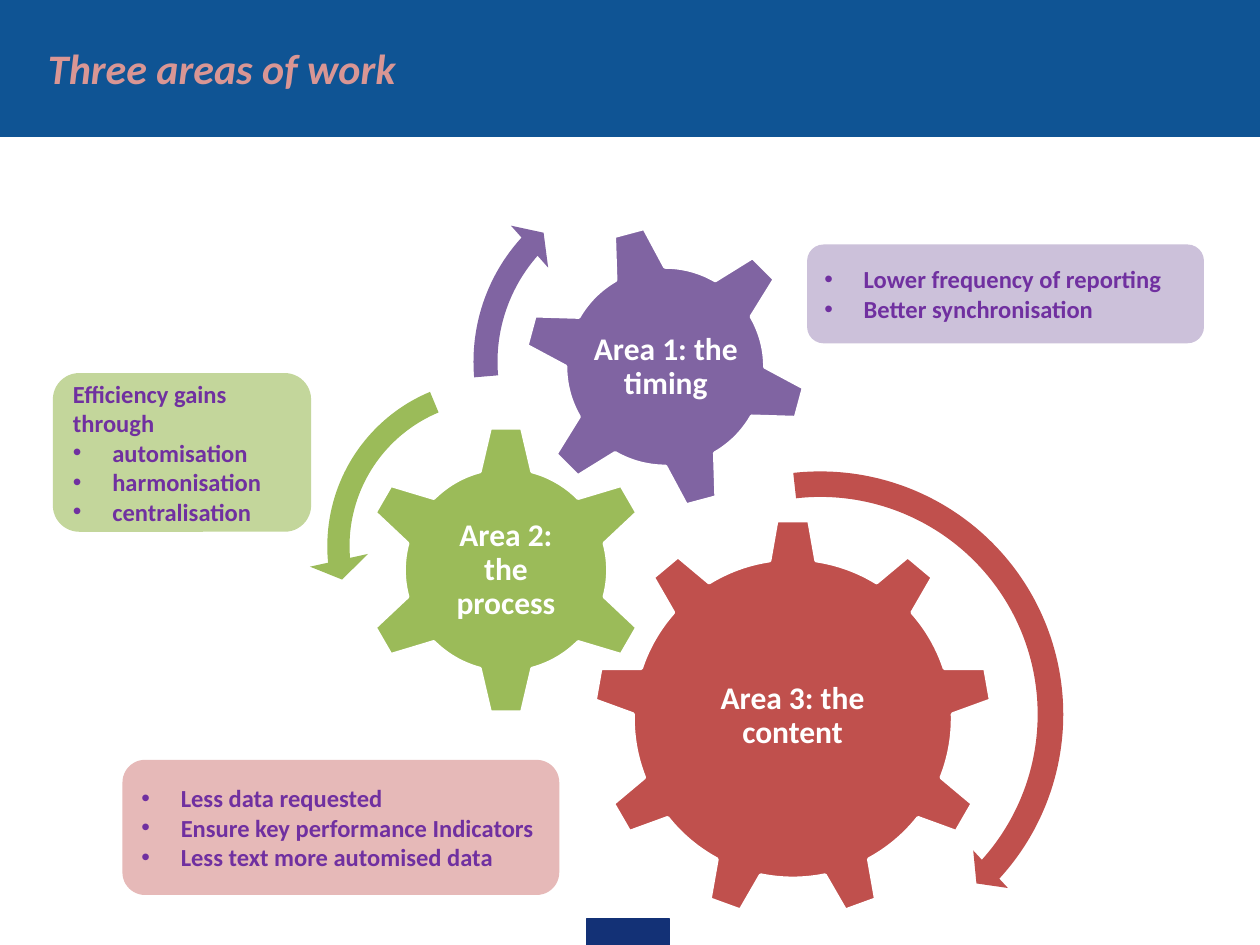
from dataclasses import dataclass

from lxml import etree
from pptx import Presentation
from pptx.dml.color import RGBColor
from pptx.enum.shapes import MSO_SHAPE
from pptx.enum.text import MSO_ANCHOR, MSO_AUTO_SIZE, PP_ALIGN
from pptx.oxml.ns import qn
from pptx.util import Pt

RECT, ROUNDED = MSO_SHAPE.RECTANGLE, MSO_SHAPE.ROUNDED_RECTANGLE
GEAR_6, GEAR_9 = MSO_SHAPE.GEAR_6, MSO_SHAPE.GEAR_9
CLOCKWISE, COUNTERCLOCKWISE = MSO_SHAPE.CIRCULAR_ARROW, MSO_SHAPE.LEFT_CIRCULAR_ARROW
TOP, MIDDLE = MSO_ANCHOR.TOP, MSO_ANCHOR.MIDDLE
LEFT, CENTER = PP_ALIGN.LEFT, PP_ALIGN.CENTER
GROW = MSO_AUTO_SIZE.SHAPE_TO_FIT_TEXT

Box = tuple[float, float, float, float]  # left, top, width, height in points


@dataclass(frozen=True)
class Theme:
    font: str = "Calibri"
    title_size: float = 24
    label_size: float = 18
    note_size: float = 14
    header: str = "0F5494"
    footer: str = "133176"
    title: str = "D99694"
    white: str = "FFFFFF"
    note: str = "7030A0"
    red: str = "C0504D"
    green: str = "9BBB59"
    purple: str = "8064A2"
    light_red: str = "E6B9B8"
    light_green: str = "C3D69B"
    light_purple: str = "CCC1DA"


THEME = Theme()
BULLET_INDENT = 22.5
LABEL_INSET = 2


@dataclass(frozen=True)
class Gear:
    kind: int
    left: float
    top: float
    size: float
    color: str
    label: str
    label_box: Box
    rotation: float = 0


@dataclass(frozen=True)
class TurnArrow:
    kind: int
    left: float
    top: float
    size: float
    color: str
    adjustments: tuple[float, ...]


@dataclass(frozen=True)
class Note:
    box: Box
    color: str
    bullets: tuple[str, ...]
    intro: str = ""


GEARS = [
    Gear(GEAR_9, 339, 296.6, 228.2, THEME.red, "Area 3: the content",
         (384.5, 350.6, 136.8, 117.4)),
    Gear(GEAR_6, 206, 242.6, 166.3, THEME.green, "Area 2: the process",
         (247.7, 285.1, 82.8, 82.1)),
    Gear(GEAR_6, 298.8, 128.2, 162.7, THEME.purple, "Area 1: the timing",
         (334.8, 164.2, 91.4, 91.4), 345),
]
TURN_ARROWS = [
    TurnArrow(CLOCKWISE, 322.6, 262.1, 292.3, THEME.red,
              (0.05, 2.99, 25.37, 158.17, 0.05)),
    TurnArrow(COUNTERCLOCKWISE, 176.4, 205.9, 212.4, THEME.green,
              (0.06, 4.3, 104.89, 148.38, 0.08)),
    TurnArrow(CLOCKWISE, 261.4, 92.2, 229, THEME.purple,
              (0.06, 3.94, 133.14, 105.08, 0.07)),
]
NOTES = [
    Note((461.2, 139.7, 226.8, 56.5), THEME.light_purple,
         ("Lower frequency of reporting", "Better synchronisation")),
    Note((70, 434.2, 249.6, 77.2), THEME.light_red,
         ("Less data requested", "Ensure key performance Indicators",
          "Less text more automised data")),
    Note((30.2, 213.2, 147.6, 90.7), THEME.light_green,
         ("automisation", "harmonisation", "centralisation"),
         "Efficiency gains through"),
]


def rgb(color: str) -> RGBColor:
    return RGBColor.from_string(color)


def add_filled(slide, kind: int, box: Box, color: str,
               line_color: str = "", line_width: float = 0.75):
    shape = slide.shapes.add_shape(kind, *map(Pt, box))
    shape.shadow.inherit = False
    shape.fill.solid()
    shape.fill.fore_color.rgb = rgb(color)
    if line_color:
        shape.line.color.rgb = rgb(line_color)
        shape.line.width = Pt(line_width)
    else:
        shape.line.fill.background()
    return shape


def set_font(paragraph, size: float, color: str, italic: bool = False) -> None:
    font = paragraph.font
    font.name, font.size = THEME.font, Pt(size)
    font.bold, font.italic = True, italic
    font.color.rgb = rgb(color)


def add_bullet(paragraph) -> None:
    properties = paragraph._p.get_or_add_pPr()
    properties.set("marL", str(Pt(BULLET_INDENT)))
    properties.set("indent", str(-Pt(BULLET_INDENT)))
    bullet_font = etree.SubElement(properties, qn("a:buFont"))
    bullet_font.set("typeface", "Arial")
    etree.SubElement(properties, qn("a:buChar")).set("char", "•")


def draw_gear(slide, gear: Gear) -> None:
    box = (gear.left, gear.top, gear.size, gear.size)
    wheel = add_filled(slide, gear.kind, box, gear.color, THEME.white, 2)
    wheel.rotation = gear.rotation
    frame = slide.shapes.add_textbox(*map(Pt, gear.label_box)).text_frame
    frame.word_wrap, frame.vertical_anchor = True, MIDDLE
    frame.margin_left = frame.margin_right = Pt(LABEL_INSET)
    frame.margin_top = frame.margin_bottom = Pt(LABEL_INSET)
    label = frame.paragraphs[0]
    label.text, label.alignment, label.line_spacing = gear.label, CENTER, 0.9
    set_font(label, THEME.label_size, THEME.white)


def draw_turn_arrow(slide, arrow: TurnArrow) -> None:
    box = (arrow.left, arrow.top, arrow.size, arrow.size)
    turn = add_filled(slide, arrow.kind, box, arrow.color)
    for index, value in enumerate(arrow.adjustments):
        turn.adjustments[index] = value


def draw_note(slide, note: Note) -> None:
    frame = add_filled(slide, ROUNDED, note.box, note.color).text_frame
    frame.word_wrap, frame.vertical_anchor = True, MIDDLE
    lines = ([note.intro] if note.intro else []) + list(note.bullets)
    for index, line in enumerate(lines):
        paragraph = frame.add_paragraph() if index else frame.paragraphs[0]
        paragraph.text, paragraph.alignment = line, LEFT
        if line != note.intro:
            add_bullet(paragraph)
        set_font(paragraph, THEME.note_size, THEME.note)


def draw_title(slide, text: str) -> None:
    title = slide.shapes.title
    title.left, title.top, title.width, title.height = map(Pt, (20.2, 20.9, 277.2, 36))
    frame = title.text_frame
    frame.word_wrap, frame.vertical_anchor, frame.auto_size = True, TOP, GROW
    heading = frame.paragraphs[0]
    heading.text, heading.alignment = text, LEFT
    set_font(heading, THEME.title_size, THEME.title, italic=True)
    # Bring the title in front of the header band
    title.element.getparent().append(title.element)


def main() -> None:
    deck = Presentation()
    deck.slide_width, deck.slide_height = Pt(720), Pt(540)
    slide = deck.slides.add_slide(deck.slide_layouts[5])

    # Header band and footer block
    add_filled(slide, RECT, (0, 0, 720, 77.8), THEME.header, THEME.header)
    add_filled(slide, RECT, (335.5, 524.9, 46.8, 15.1), THEME.footer, THEME.footer)

    # Interlocking areas, their turning directions and notes
    for gear in GEARS:
        draw_gear(slide, gear)
    for arrow in TURN_ARROWS:
        draw_turn_arrow(slide, arrow)
    for note in NOTES:
        draw_note(slide, note)

    draw_title(slide, "Three areas of work")
    deck.save("out.pptx")


if __name__ == "__main__":
    main()
